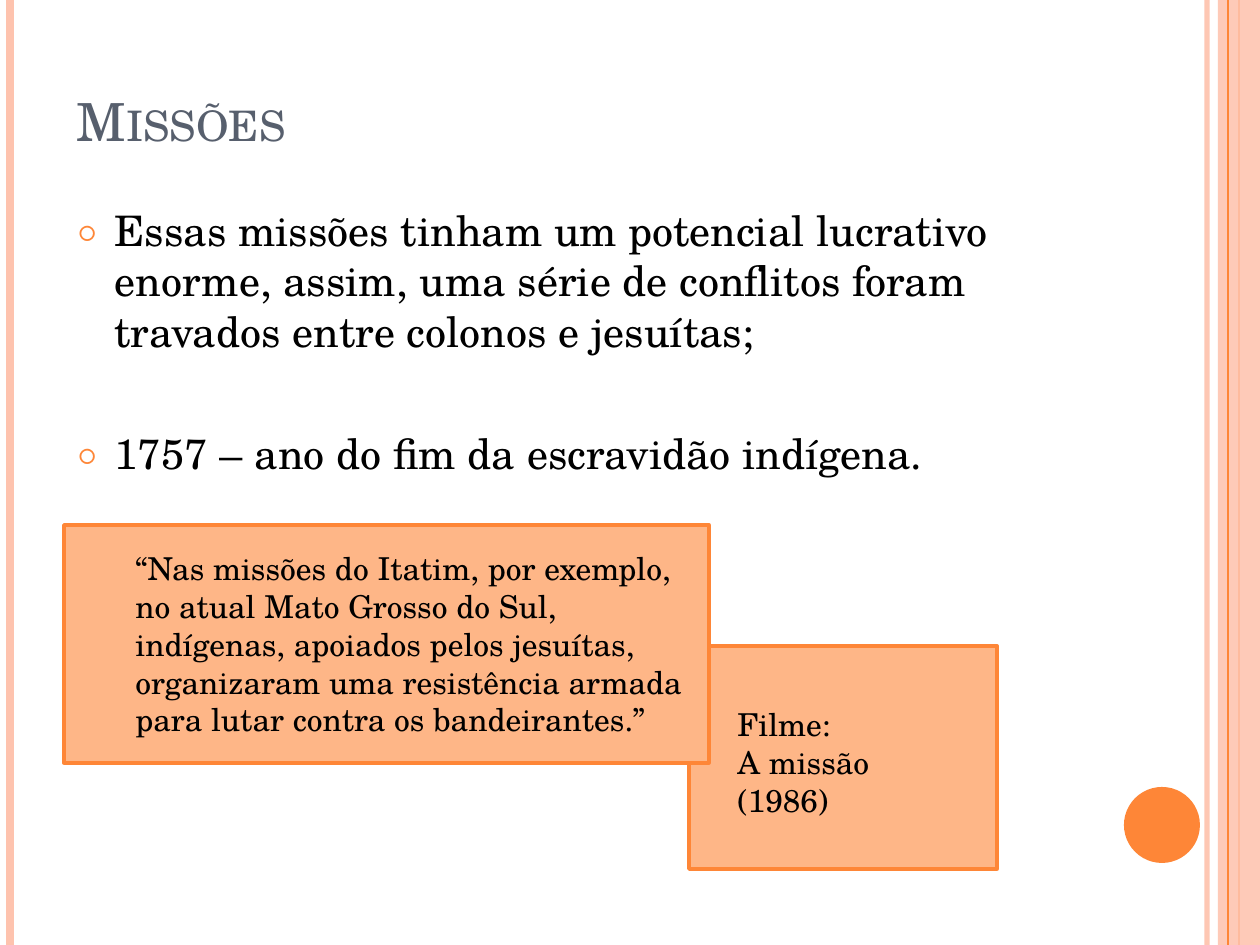
from dataclasses import dataclass

from lxml.etree import SubElement
from pptx import Presentation
from pptx.dml.color import RGBColor
from pptx.enum.shapes import MSO_CONNECTOR as Connector, MSO_SHAPE as Shape
from pptx.enum.text import MSO_ANCHOR as Anchor, MSO_AUTO_SIZE as AutoSize, PP_ALIGN as Align
from pptx.oxml.ns import qn
from pptx.util import Emu, Pt

SCALE = 914400 / 126
WIDTH, HEIGHT = 1260, 945


@dataclass(frozen=True)
class Theme:
    font: str = "TeX Gyre Schola"
    heading: str = "575F6D"
    ink: str = "000000"
    accent: str = "FE8637"
    pale: str = "FEC3AE"
    panel: str = "FEB687"
    title_size: int = 30
    body_size: int = 24
    note_size: int = 18


THEME = Theme()

TITLE = ("Missões", (64, 0, 1029, 158))
TOPICS = [
    "Essas missões tinham um potencial lucrativo enorme, assim, uma série de "
    "conflitos foram travados entre colonos e jesuítas;",
    "1757 – ano do fim da escravidão indígena.",
]
TOPICS_BOX = (64, 198, 1029, 672)
TOPIC_GAPS = (6, 41)
NOTES = [
    (["Filme:", "A missão", "(1986)"], (689, 646, 308, 223), (725, 699, 238, 127)),
    (["“Nas missões do Itatim, por exemplo, no atual Mato Grosso do Sul, "
      "indígenas, apoiados pelos jesuítas, organizaram uma resistência armada "
      "para lutar contra os bandeirantes.”"],
     (64, 525, 645, 238), (123, 543, 586, 242)),
]
STRIPES_BEHIND = [
    (1207, THEME.pale, 3, 93),
    (10, THEME.pale, 4.5, 100),
    (1239, THEME.accent, 1.5, 100),
]
STRIPE_FRONT = (1228, THEME.accent, 0.75, 100)
SIDE_BAND = (1218, 0, 42, HEIGHT)
DISC = (1124, 787, 76, 76)


def px(value):
    return Emu(round(value * SCALE))


def emu_box(box):
    return [px(value) for value in box]


def rgb(color):
    return RGBColor.from_string(color)


def set_opacity(part, percent):
    if percent < 100:
        for color in part._element.iter(qn("a:srgbClr")):
            SubElement(color, qn("a:alpha"), val=str(percent * 1000))


def add_stripe(slide, x, color, weight, opacity):
    stripe = slide.shapes.add_connector(Connector.STRAIGHT, px(x), 0, px(x), px(HEIGHT))
    stripe.line.color.rgb = rgb(color)
    stripe.line.width = Pt(weight)
    set_opacity(stripe, opacity)
    SubElement(stripe._element.spPr, qn("a:effectLst"))


def add_panel(slide, kind, box, fill, outline=None, opacity=100):
    panel = slide.shapes.add_shape(kind, *emu_box(box))
    panel.shadow.inherit = False
    panel.fill.solid()
    panel.fill.fore_color.rgb = rgb(fill)
    set_opacity(panel, opacity)
    if outline:
        panel.line.color.rgb = rgb(outline)
        panel.line.width = Pt(2)
    else:
        panel.line.fill.background()


def add_bullet(paragraph):
    props = paragraph._p.get_or_add_pPr()
    indent = px(38)
    props.set("marL", str(indent))
    props.set("indent", str(-indent))
    SubElement(SubElement(props, qn("a:buClr")), qn("a:srgbClr"), val=THEME.accent)
    SubElement(props, qn("a:buSzPct"), val="70000")
    SubElement(props, qn("a:buFont"), typeface=THEME.font)
    SubElement(props, qn("a:buChar"), char="○")


def write(holder, lines, box, *, size, color=THEME.ink, anchor=Anchor.TOP,
          gaps=None, bullets=False, small_caps=False):
    holder.left, holder.top, holder.width, holder.height = emu_box(box)
    frame = holder.text_frame
    frame.word_wrap = True
    frame.auto_size = AutoSize.NONE
    frame.vertical_anchor = anchor
    for index, line in enumerate(lines):
        paragraph = frame.paragraphs[0] if index == 0 else frame.add_paragraph()
        paragraph.alignment = Align.LEFT
        paragraph.space_before = Pt(gaps[index] if gaps else 0)
        if bullets:
            add_bullet(paragraph)
        run = paragraph.add_run()
        run.text = line
        run.font.name = THEME.font
        run.font.size = Pt(size)
        run.font.color.rgb = rgb(color)
        if small_caps:
            run.font._element.set("cap", "small")


def main():
    deck = Presentation()
    deck.slide_width, deck.slide_height = px(WIDTH), px(HEIGHT)
    slide = deck.slides.add_slide(deck.slide_layouts[1])

    for stripe in STRIPES_BEHIND:
        add_stripe(slide, *stripe)
    add_panel(slide, Shape.RECTANGLE, SIDE_BAND, THEME.pale, opacity=87)
    add_stripe(slide, *STRIPE_FRONT)
    add_panel(slide, Shape.OVAL, DISC, THEME.accent)

    heading, heading_box = TITLE
    write(slide.shapes.title, [heading], heading_box, size=THEME.title_size,
          color=THEME.heading, anchor=Anchor.BOTTOM, small_caps=True)
    write(slide.placeholders[1], TOPICS, TOPICS_BOX, size=THEME.body_size,
          gaps=TOPIC_GAPS, bullets=True)

    for lines, panel_box, text_box in NOTES:
        add_panel(slide, Shape.RECTANGLE, panel_box, THEME.panel, outline=THEME.accent)
        note = slide.shapes.add_textbox(*emu_box(text_box))
        write(note, lines, text_box, size=THEME.note_size)

    deck.save("out.pptx")


if __name__ == "__main__":
    main()
